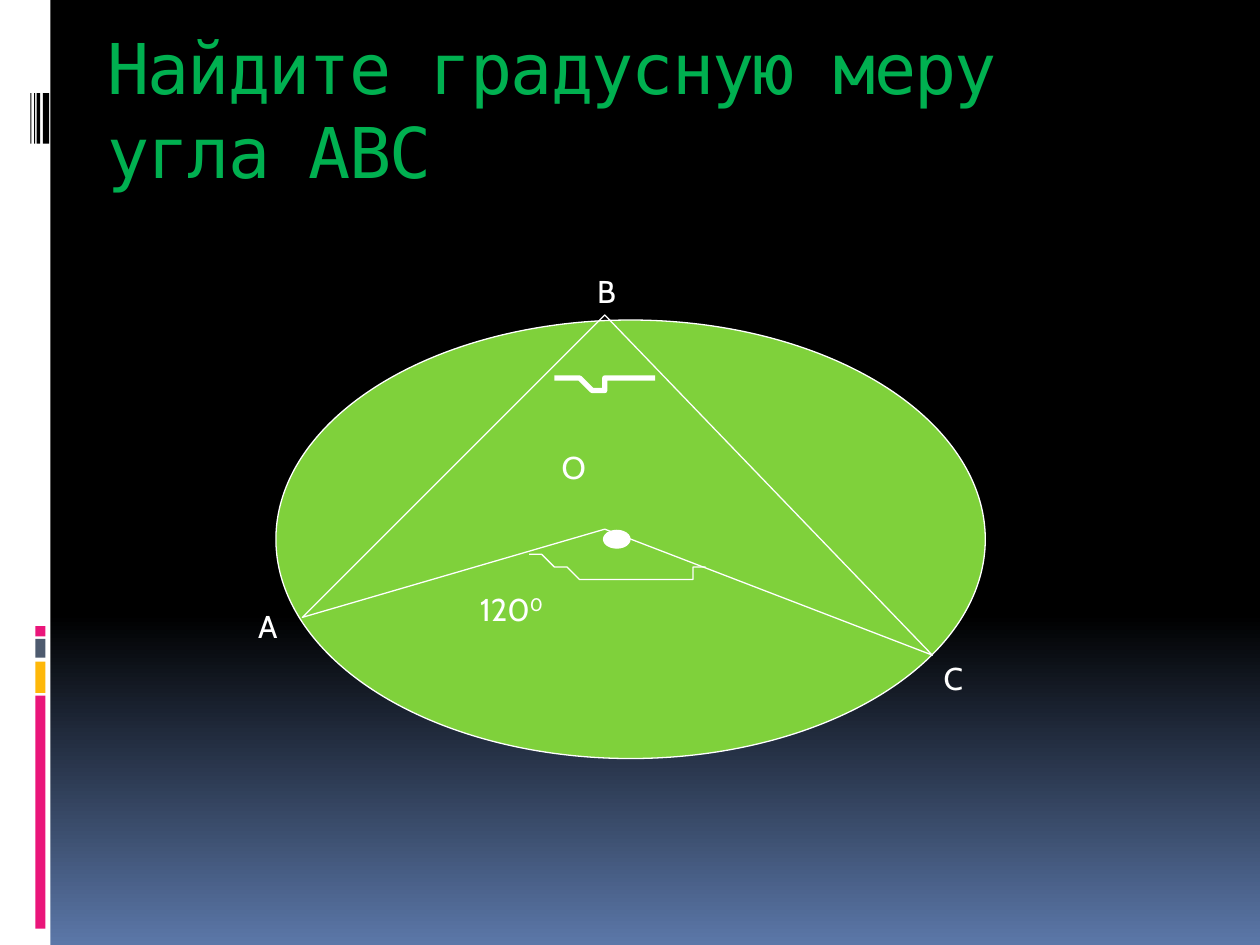
from lxml import etree
from pptx import Presentation
from pptx import util as u
from pptx.dml.color import RGBColor
from pptx.enum import shapes, text
from pptx.oxml import parse_xml
from pptx.oxml.ns import nsdecls, qn

WHITE, BLACK, PINK, GREEN = "FFFFFF", "000000", "EA157A", "7FD13B"


def hue(code):
    return RGBColor.from_string(code)


def cell(n):
    """Length of n grid columns or rows; the slide is 100 by 75."""
    return u.Inches(n / 10)


def put(par, words, size=18, font="Cabin", color=WHITE, rise=0, gap=0, shade=None):
    """Add a run; rise is the baseline shift in %, gap the letter spacing in points."""
    run = par.add_run()
    run.text = words
    run.font.size = u.Pt(size)
    run.font.color.rgb = hue(color)
    run.font.name = font
    props = run.font._element
    if rise:
        props.set("baseline", str(rise * 1000))
    if gap:
        props.set("spc", str(gap * 100))
    if shade:
        props.find(qn("a:solidFill")).addnext(parse_xml(
            f'<a:effectLst {nsdecls("a")}><a:outerShdw blurRad="0" dist="38100" dir="2700000">'
            f'<a:srgbClr val="{shade}"/></a:outerShdw></a:effectLst>'))


def bend(start, curves, steps=12):
    """Points along a chain of cubic Bezier curves."""
    points = [start]
    for b, c, d in curves:
        a = points[-1]
        for i in range(1, steps + 1):
            t = i / steps
            s = 1 - t
            points.append(tuple(
                s**3 * p + 3 * s * s * t * q + 3 * s * t * t * r + t**3 * v
                for p, q, r, v in zip(a, b, c, d)))
    return points


class Page:
    """The current slide and the style of its elements."""

    def __init__(self, deck):
        self.slide = deck.slides.add_slide(deck.slide_layouts[5])
        self.items = self.slide.shapes

    def back(self, stops):
        fill = self.slide.background.fill
        fill.gradient()
        fill.gradient_angle = 270
        root = self.slide._element.find(".//" + qn("a:gsLst"))
        for old in list(root):
            root.remove(old)
        for pos, code in stops:
            stop = etree.SubElement(root, qn("a:gs"), pos=str(pos * 1000))
            etree.SubElement(stop, qn("a:srgbClr"), val=code)

    def paint(self, item, fill, line, width=0.75):
        item.shadow.inherit = False
        if fill:
            item.fill.solid()
            item.fill.fore_color.rgb = hue(fill)
        else:
            item.fill.background()
        if line:
            item.line.color.rgb = hue(line)
            item.line.width = u.Pt(width)
        else:
            item.line.fill.background()

    def shape(self, kind, box, fill, line=None):
        item = self.items.add_shape(kind, *map(cell, box))
        self.paint(item, fill, line)

    def bar(self, box, fill):
        self.shape(shapes.MSO_SHAPE.RECTANGLE, box, fill)

    def oval(self, box, fill):
        self.shape(shapes.MSO_SHAPE.OVAL, box, fill, WHITE)

    def trace(self, points, close=False, width=0.75):
        pen = self.items.build_freeform(*points[0], scale=cell(1))
        pen.add_line_segments(points[1:], close=close)
        self.paint(pen.convert_to_shape(), None, WHITE, width)

    def label(self, box, words, power=None, wrap=True):
        frame = self.items.add_textbox(*map(cell, box)).text_frame
        frame.word_wrap = wrap
        put(frame.paragraphs[0], words)
        if power:
            put(frame.paragraphs[0], power, rise=30)

    def title(self, box, words):
        item = self.items.title
        item.left, item.top, item.width, item.height = map(cell, box)
        frame = item.text_frame
        frame.auto_size = text.MSO_AUTO_SIZE.NONE
        frame.vertical_anchor = text.MSO_ANCHOR.MIDDLE
        frame.paragraphs[0].alignment = text.PP_ALIGN.LEFT
        put(frame.paragraphs[0], words, size=40, font="DejaVu Sans Mono",
            color="00B050", gap=-1, shade="808080")


def main():
    deck = Presentation()
    deck.slide_width, deck.slide_height = cell(100), cell(75)
    page = Page(deck)
    page.back([(0, BLACK), (65, BLACK), (100, "5B77A8")])

    page.bar((0, 0, 4, 75), WHITE)
    for top, high, color in ((55.2, 18.5, PINK), (52.5, 2.5, "FEB80A"),
                             (50.7, 1.5, "4E5B6F"), (49.7, 0.8, PINK)):
        page.bar((2.8, top, 0.8, high), color)
    for left, wide in ((3.4, 0.5), (2.9, 0.3), (2.7, 0.1), (2.4, 0.1)):
        page.bar((left, 7.4, wide, 4), BLACK)

    page.title((7.5, 1.7, 75.1, 13.8), "Найдите градусную меру угла АВС")

    page.oval((21.9, 25.4, 56.3, 34.8), GREEN)
    page.oval((47.9, 42.1, 2.1, 1.4), WHITE)
    page.label((19.5, 47.7, 6.7, 4), "A")
    page.label((46.4, 21.1, 8.1, 4), "B")
    page.label((73.9, 51.8, 21.7, 7.1), "C")
    page.label((43.6, 35.1, 11, 7.1), "O", wrap=False)
    page.trace([(24.1, 49), (47.9, 25.4), (73.9, 51.8), (47.9, 42.1)], close=True)
    page.trace(bend((43.9, 29.7), [
        ((46.4, 30.8), (46.8, 30.6), (50.1, 30.3)),
        ((50.6, 30.2), (51.5, 30), (51.5, 30))]), width=3)
    page.trace(bend((42.2, 44), [
        ((44.1, 44.8), (45.3, 45.8), (47.5, 46.3)),
        ((49.3, 46.2), (51, 46.2), (52.8, 46)),
        ((53.7, 45.9), (55.5, 45.4), (55.5, 45.4))]))
    page.label((37.1, 46.3, 21.7, 7.1), "120", power="0")

    deck.save("out.pptx")


if __name__ == "__main__":
    main()
